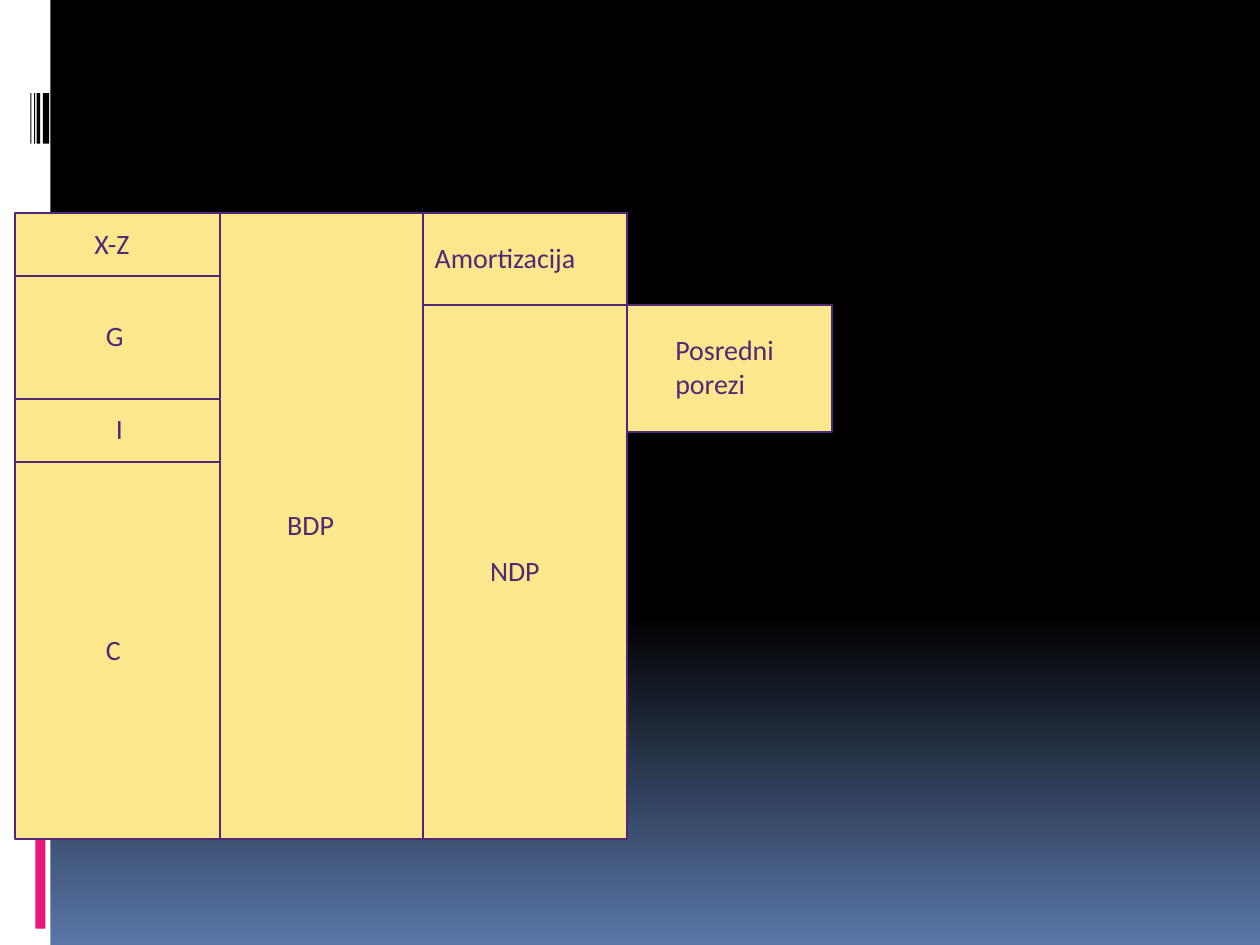
from dataclasses import dataclass

from pptx import Presentation
from pptx.dml.color import RGBColor
from pptx.enum.shapes import MSO_SHAPE
from pptx.enum.text import MSO_AUTO_SIZE
from pptx.util import Inches, Pt


@dataclass(frozen=True)
class Theme:
    black: RGBColor = RGBColor(0x00, 0x00, 0x00)
    white: RGBColor = RGBColor(0xFF, 0xFF, 0xFF)
    blue: RGBColor = RGBColor(0x5A, 0x77, 0xA9)
    pink: RGBColor = RGBColor(0xEA, 0x15, 0x7A)
    yellow: RGBColor = RGBColor(0xFC, 0xE7, 0x8C)
    purple: RGBColor = RGBColor(0x50, 0x28, 0x78)
    font: str = "Calibri"
    label_size: Pt = Pt(16)
    border_width: Pt = Pt(1.13)


THEME = Theme()
LINE_HEIGHT = 0.27

# Edges of the account columns and of the levels that divide them
COLUMNS = (0.12, 1.75, 3.36, 4.98, 6.6)
TOP, BOTTOM = 1.69, 6.66
NET_TOP, TAX_BOTTOM = 2.42, 3.43

# Column, top, bottom, label, label left, label top, label width
BLOCKS = (
    (2, NET_TOP, BOTTOM, "NDP", 3.89, 4.39, 0.47),
    (1, TOP, BOTTOM, "BDP", 2.28, 4.03, 0.46),
    (0, 3.67, BOTTOM, "C", 0.84, 5.02, 0.16),
    (3, NET_TOP, TAX_BOTTOM, "Posredni\nporezi", 5.36, 2.64, 0.95),
    (2, TOP, NET_TOP, "Amortizacija", 3.45, 1.91, 1.22),
    (0, 3.17, 3.67, "I", 0.92, 3.27, 0.06),
    (0, 2.19, 3.17, "G", 0.84, 2.53, 0.18),
    (0, TOP, 2.19, "X-Z", 0.75, 1.8, 0.36),
)

BARCODE = ((0.34, 0.05), (0.29, 0.03), (0.27, 0.01), (0.24, 0.01))


def paint_background(slide):
    fill = slide.background.fill
    fill.gradient()
    fill.gradient_angle = 270
    stops = ((0.65, THEME.black), (1, THEME.blue))
    for stop, (position, color) in zip(fill.gradient_stops, stops):
        stop.position = position
        stop.color.rgb = color


def add_rectangle(shapes, left, top, width, height, color, border=None):
    shape = shapes.add_shape(
        MSO_SHAPE.RECTANGLE, Inches(left), Inches(top), Inches(width), Inches(height)
    )
    shape.shadow.inherit = False
    shape.fill.solid()
    shape.fill.fore_color.rgb = color
    if border is None:
        shape.line.fill.background()
    else:
        shape.line.color.rgb = border
        shape.line.width = THEME.border_width


def add_label(shapes, text, left, top, width):
    lines = text.split("\n")
    box = shapes.add_textbox(
        Inches(left), Inches(top), Inches(width), Inches(LINE_HEIGHT * len(lines))
    )
    frame = box.text_frame
    frame.margin_left = frame.margin_top = frame.margin_right = frame.margin_bottom = 0
    frame.word_wrap = False
    frame.auto_size = MSO_AUTO_SIZE.SHAPE_TO_FIT_TEXT
    frame.text = text
    for paragraph in frame.paragraphs:
        paragraph.font.name = THEME.font
        paragraph.font.size = THEME.label_size
        paragraph.font.color.rgb = THEME.purple


def add_side_strip(shapes):
    add_rectangle(shapes, 0, 0, 0.4, 7.5, THEME.white)
    add_rectangle(shapes, 0.28, 5.52, 0.08, 1.85, THEME.pink)
    for left, width in BARCODE:
        add_rectangle(shapes, left, 0.74, width, 0.4, THEME.black)


def add_block(slide, column, top, bottom, text, *label_place):
    """Group one account component's rectangle with its label."""
    shapes = slide.shapes.add_group_shape().shapes
    left, right = COLUMNS[column:column + 2]
    add_rectangle(shapes, left, top, right - left, bottom - top,
                  THEME.yellow, THEME.purple)
    add_label(shapes, text, *label_place)


def main():
    presentation = Presentation()
    presentation.slide_width = Inches(10)
    presentation.slide_height = Inches(7.5)
    slide = presentation.slides.add_slide(presentation.slide_layouts[6])
    paint_background(slide)
    add_side_strip(slide.shapes)
    for block in BLOCKS:
        add_block(slide, *block)
    presentation.save("out.pptx")


if __name__ == "__main__":
    main()
